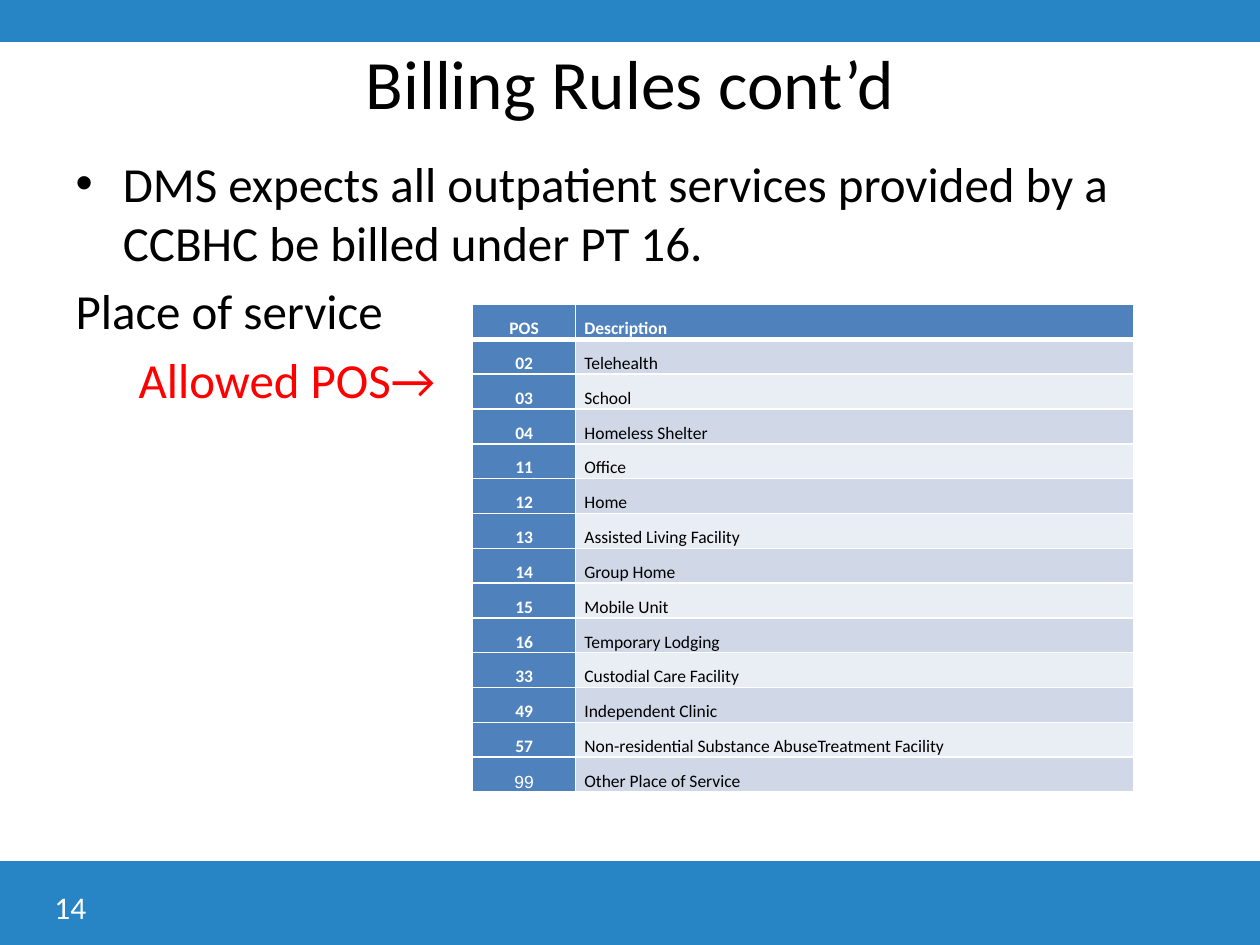
from dataclasses import dataclass
from typing import Any

import pptx
import pptx.dml.color
import pptx.enum.shapes
import pptx.enum.text
import pptx.oxml.ns
import pptx.util
from lxml import etree

Pt = pptx.util.Pt
Align = pptx.enum.text.PP_ALIGN
Anchor = pptx.enum.text.MSO_ANCHOR


@dataclass(frozen=True)
class Theme:
    bar: str = "2784C5"
    header: str = "4F81BD"
    bands: tuple[str, str] = ("D0D8E8", "E9EDF4")
    white: str = "FFFFFF"
    black: str = "000000"
    accent: str = "FF0000"
    font: str = "Calibri"
    alternate_font: str = "Arial"
    title_size: float = 39.6
    body_size: float = 28
    number_size: float = 18
    table_size: float = 10


@dataclass(frozen=True)
class Box:
    left: float
    top: float
    width: float
    height: float

    def lengths(self) -> tuple[Any, ...]:
        return Pt(self.left), Pt(self.top), Pt(self.width), Pt(self.height)


@dataclass(frozen=True)
class Point:
    text: str
    color: str
    bullet: str = ""
    level: int = 0
    margin: float = 0
    indent: float = 0


@dataclass(frozen=True)
class Place:
    code: str
    description: str
    font: str = "Calibri"
    bold: bool = True


THEME = Theme()
BARS = (Box(0, 0, 720, 24), Box(0, 492, 720, 48))
POINTS = (
    Point("DMS expects all outpatient services provided by a CCBHC be billed under PT 16.",
          THEME.black, bullet="•", margin=27, indent=-27),
    Point("Place of service", THEME.black),
    Point("Allowed POS→", THEME.accent, level=1, margin=36),
)
PLACES = (
    Place("02", "Telehealth"),
    Place("03", "School"),
    Place("04", "Homeless Shelter"),
    Place("11", "Office"),
    Place("12", "Home"),
    Place("13", "Assisted Living Facility"),
    Place("14", "Group Home"),
    Place("15", "Mobile Unit"),
    Place("16", "Temporary Lodging"),
    Place("33", "Custodial Care Facility"),
    Place("49", "Independent Clinic"),
    Place("57", "Non-residential Substance AbuseTreatment Facility"),
    Place("99", "Other Place of Service", font=THEME.alternate_font, bold=False),
)
COLUMN_WIDTHS = (59, 319)
ROW_HEIGHT = 19.9


def rgb(color: str) -> pptx.dml.color.RGBColor:
    return pptx.dml.color.RGBColor.from_string(color)


def write(paragraph: Any, text: str, *, size: float, color: str, font: str = THEME.font,
          bold: bool = False, align: Any = Align.LEFT, before: float = 0) -> None:
    paragraph.alignment = align
    paragraph.space_before = Pt(before)
    run = paragraph.add_run()
    run.text = text
    run.font.name = font
    run.font.size = Pt(size)
    run.font.bold = bold
    run.font.color.rgb = rgb(color)


def place(shape: Any, box: Box) -> None:
    shape.left, shape.top, shape.width, shape.height = box.lengths()


def draw_bar(slide: Any, box: Box) -> None:
    bar = slide.shapes.add_shape(pptx.enum.shapes.MSO_SHAPE.RECTANGLE, *box.lengths())
    bar.shadow.inherit = False
    bar.fill.solid()
    bar.fill.fore_color.rgb = rgb(THEME.bar)
    bar.line.fill.background()


def write_point(paragraph: Any, point: Point, before: float) -> None:
    paragraph.level = point.level
    properties = paragraph._p.get_or_add_pPr()
    properties.set("marL", str(Pt(point.margin)))
    properties.set("indent", str(Pt(point.indent)))
    bullet_tag = "a:buChar" if point.bullet else "a:buNone"
    bullet = etree.SubElement(properties, pptx.oxml.ns.qn(bullet_tag))
    if point.bullet:
        bullet.set("char", point.bullet)
    write(paragraph, point.text, size=THEME.body_size, color=point.color, before=before)


def add_borders(cell: Any, top: float, bottom: float) -> None:
    qn = pptx.oxml.ns.qn
    properties = cell._tc.get_or_add_tcPr()
    for side, width in (("L", 1), ("R", 1), ("T", top), ("B", bottom)):
        border = etree.SubElement(properties, qn(f"a:ln{side}"), w=str(Pt(width)))
        fill = etree.SubElement(border, qn("a:solidFill"))
        etree.SubElement(fill, qn("a:srgbClr"), val=THEME.white)


def fill_cell(cell: Any, text: str, fill: str, row: int, **text_format: Any) -> None:
    # The rule under the header row is heavier than the others
    add_borders(cell, top=3 if row == 1 else 1, bottom=3 if row == 0 else 1)
    cell.fill.solid()
    cell.fill.fore_color.rgb = rgb(fill)
    cell.vertical_anchor = Anchor.BOTTOM
    cell.margin_left = cell.margin_right = Pt(5)
    cell.margin_top = cell.margin_bottom = 0
    write(cell.text_frame.paragraphs[0], text, size=THEME.table_size, **text_format)


def draw_places(slide: Any, left: float, top: float) -> None:
    rows = (Place("POS", "Description"), *PLACES)
    box = Box(left, top, sum(COLUMN_WIDTHS), ROW_HEIGHT * len(rows))
    places = slide.shapes.add_table(len(rows), len(COLUMN_WIDTHS), *box.lengths()).table
    for column, width in zip(places.columns, COLUMN_WIDTHS):
        column.width = Pt(width)
    for number, entry in enumerate(rows):
        places.rows[number].height = Pt(ROW_HEIGHT)
        heading = number == 0
        fill_cell(places.cell(number, 0), entry.code, THEME.header, number,
                  color=THEME.white, font=entry.font, bold=entry.bold, align=Align.CENTER)
        fill_cell(places.cell(number, 1), entry.description,
                  THEME.header if heading else THEME.bands[(number - 1) % 2], number,
                  color=THEME.white if heading else THEME.black, bold=heading)


def main() -> None:
    deck = pptx.Presentation()
    deck.slide_width, deck.slide_height = Pt(720), Pt(540)
    slide = deck.slides.add_slide(deck.slide_layouts[1])

    # Top and bottom bars
    for box in BARS:
        draw_bar(slide, box)

    # Title
    title = slide.shapes.title
    place(title, Box(36, 21.6, 648, 50.4))
    title.text_frame.auto_size = pptx.enum.text.MSO_AUTO_SIZE.NONE
    title.text_frame.vertical_anchor = Anchor.MIDDLE
    write(title.text_frame.paragraphs[0], "Billing Rules cont’d", size=THEME.title_size,
          color=THEME.black, align=Align.CENTER)

    # Billing rules
    rules = slide.placeholders[1]
    place(rules, Box(36, 84, 648, 398))
    rules.text_frame.auto_size = pptx.enum.text.MSO_AUTO_SIZE.NONE
    for number, point in enumerate(POINTS):
        paragraph = rules.text_frame.add_paragraph() if number else rules.text_frame.paragraphs[0]
        write_point(paragraph, point, before=0.2 * THEME.body_size if number else 0)

    # Slide number
    slide_number = slide.shapes.add_textbox(*Box(24, 504, 168, 28.8).lengths())
    slide_number.text_frame.word_wrap = True
    write(slide_number.text_frame.paragraphs[0], "14", size=THEME.number_size, color=THEME.white)

    # Allowed places of service
    draw_places(slide, left=270, top=174)
    deck.save("out.pptx")


if __name__ == "__main__":
    main()
